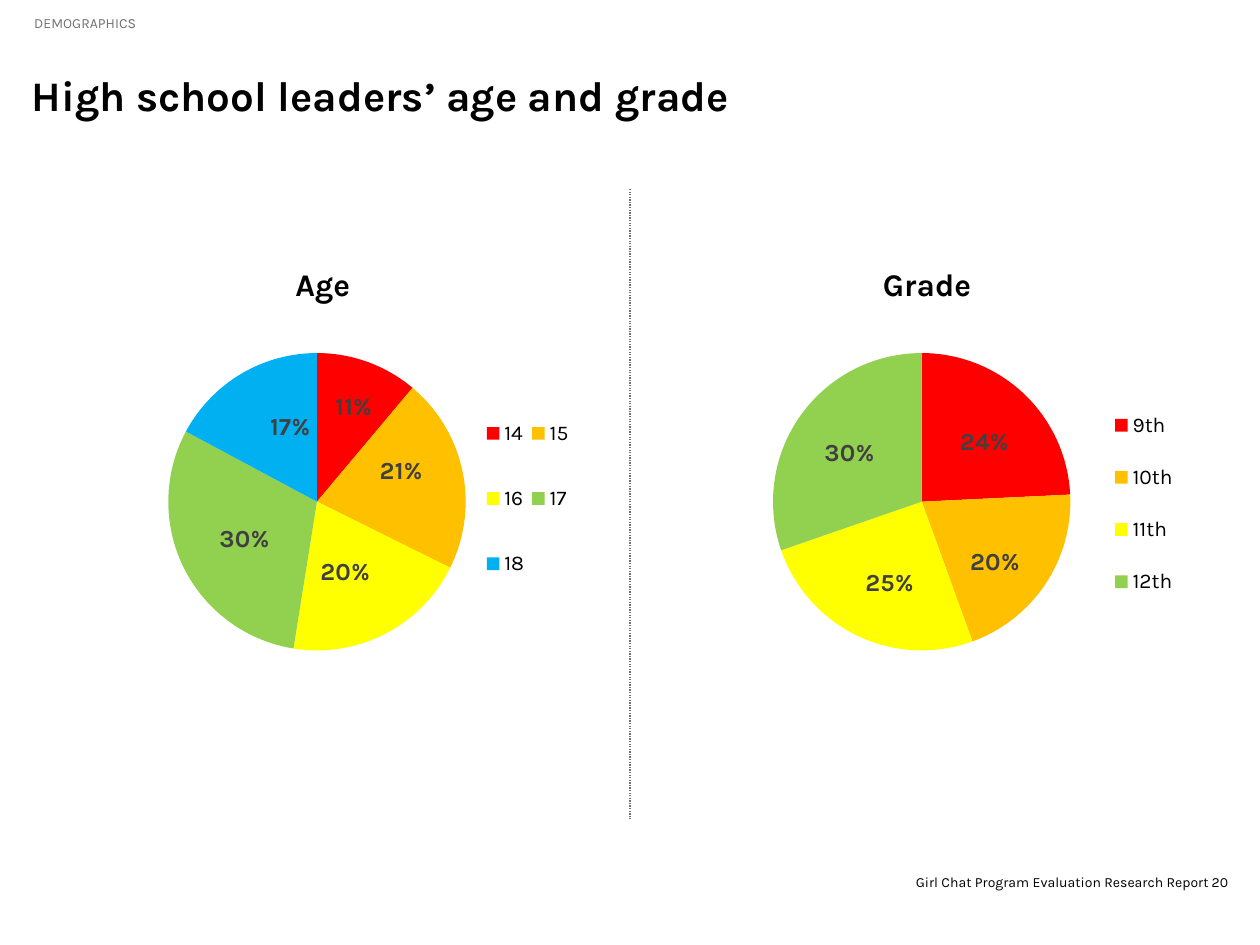
import pptx
import pptx.chart.data
import pptx.dml.color
import pptx.enum.chart
import pptx.enum.dml
import pptx.enum.shapes
import pptx.enum.text
import pptx.oxml
import pptx.oxml.ns
import pptx.util
from dataclasses import dataclass

Cm = pptx.util.Cm
Pt = pptx.util.Pt
RGB = pptx.dml.color.RGBColor.from_string
qn = pptx.oxml.ns.qn
PP_ALIGN = pptx.enum.text.PP_ALIGN
MSO_ANCHOR = pptx.enum.text.MSO_ANCHOR


@dataclass(frozen=True)
class Theme:
    font: str = "Karla"
    black: str = "000000"
    gray: str = "717073"
    label: str = "404040"
    slices: tuple = ("FF0000", "FFC000", "FFFF00", "92D050", "00B0F0")
    title_pt: int = 24
    chart_title_pt: int = 18
    label_pt: int = 14
    legend_pt: int = 12
    small_pt: int = 8


theme = Theme()


def set_font(font, size, color, bold=False):
    font.name = theme.font
    font.size = Pt(size)
    font.bold = bold
    font.color.rgb = RGB(color)


def set_layout(parent, index, modes, **sizes):
    """Place a chart part by fractions of the chart area."""
    for old in parent.findall(qn("c:layout")):
        parent.remove(old)
    layout = pptx.oxml.parse_xml(
        f'<c:layout {pptx.oxml.ns.nsdecls("c")}><c:manualLayout/></c:layout>')
    entries = [(tag, "edge" if tag != "layoutTarget" else "inner") for tag in modes]
    for tag, value in entries + list(sizes.items()):
        child = pptx.oxml.parse_xml(
            f'<c:{tag} {pptx.oxml.ns.nsdecls("c")} val="{value}"/>')
        layout[0].append(child)
    parent.insert(index, layout)


prs = pptx.Presentation()
prs.slide_width, prs.slide_height = Cm(25.4), Cm(19.05)
s = prs.slides.add_slide(prs.slide_layouts.get_by_name("Title Only"))

# Title
sp = s.shapes.title
sp.left, sp.top, sp.width, sp.height = Cm(0.64), Cm(0.64), Cm(24.13), Cm(2.54)
tf = sp.text_frame
tf.text = "High school leaders’ age and grade"
tf.margin_left = tf.margin_right = tf.margin_top = tf.margin_bottom = 0
tf.auto_size = pptx.enum.text.MSO_AUTO_SIZE.NONE
tf.vertical_anchor = MSO_ANCHOR.MIDDLE
p = tf.paragraphs[0]
p.alignment = PP_ALIGN.LEFT
set_font(p.font, theme.title_pt, theme.black, bold=True)

# Section name, footer and page number
small_texts = [
    ("DEMOGRAPHICS", 0.69, 0.28, 12.01, 0.36, MSO_ANCHOR.BOTTOM, PP_ALIGN.LEFT, theme.gray),
    ("Girl Chat Program Evaluation Research Report", 16.33, 17.15, 8.05, 1.27,
     MSO_ANCHOR.MIDDLE, PP_ALIGN.RIGHT, theme.black),
    ("20", 24.1, 17.15, 0.66, 1.27, MSO_ANCHOR.MIDDLE, PP_ALIGN.RIGHT, theme.black),
]
for text, left, top, width, height, anchor, align, color in small_texts:
    tf = s.shapes.add_textbox(Cm(left), Cm(top), Cm(width), Cm(height)).text_frame
    tf.text = text
    tf.word_wrap = True
    tf.margin_left = tf.margin_right = tf.margin_top = tf.margin_bottom = 0
    tf.vertical_anchor = anchor
    p = tf.paragraphs[0]
    p.alignment = align
    set_font(p.font, theme.small_pt, color)

# Dotted divider
line = s.shapes.add_connector(
    pptx.enum.shapes.MSO_CONNECTOR.STRAIGHT, Cm(12.7), Cm(3.81), Cm(12.7), Cm(16.51))
line.line.color.rgb = RGB(theme.gray)
line.line.width = Pt(0.75)
line.line.dash_style = pptx.enum.dml.MSO_LINE.ROUND_DOT
line._element.spPr.append(
    pptx.oxml.parse_xml(f'<a:effectLst {pptx.oxml.ns.nsdecls("a")}/>'))

# Pie charts: name, left, title x, legend box, then category, value, label shift
pies = [
    ("Age", 0.64, 0.45, dict(x=0.78, y=0.3, w=0.17, h=0.48),
     [("14", 0.11, 0.02, -0.05), ("15", 0.21, 0.02, -0.03), ("16", 0.2, -0.01, 0.01),
      ("17", 0.3, -0.01, 0.01), ("18", 0.17, 0.02, -0.02)]),
    ("Grade", 12.83, 0.42, dict(x=0.82, y=0.31, w=0.13, h=0.48),
     [("9th", 0.24, 0.02, -0.01), ("10th", 0.2, 0.02, 0.04),
      ("11th", 0.25, 0, 0.03), ("12th", 0.3, -0.02, -0.01)]),
]
for name, left, title_x, legend_box, rows in pies:
    data = pptx.chart.data.CategoryChartData(number_format="0%")
    data.categories = [row[0] for row in rows]
    data.add_series("Series 1", [row[1] for row in rows])
    chart = s.shapes.add_chart(
        pptx.enum.chart.XL_CHART_TYPE.PIE,
        Cm(left), Cm(4.7), Cm(11.56), Cm(9.91), data).chart
    set_font(chart.font, theme.chart_title_pt, theme.black)
    plot = chart.plots[0]
    plot.vary_by_categories = True
    set_layout(plot._element.getparent(), 0, ["layoutTarget", "xMode", "yMode"],
               x=0.165, y=0.244, w=0.665, h=0.605)

    # Chart title
    chart.has_title = True
    tf = chart.chart_title.text_frame
    tf.text = name
    set_font(tf.paragraphs[0].font, theme.chart_title_pt, theme.black, bold=True)
    set_layout(chart.chart_title._element, 1, ["xMode", "yMode"], x=title_x, y=0.05)

    # Legend
    chart.has_legend = True
    chart.legend.position = pptx.enum.chart.XL_LEGEND_POSITION.RIGHT
    chart.legend.include_in_layout = False
    set_font(chart.legend.font, theme.legend_pt, theme.black)
    set_layout(chart.legend._element, 1, ["xMode", "yMode"], **legend_box)

    # Slices and their labels
    series = plot.series[0]
    for i, (category, value, dx, dy) in enumerate(rows):
        point = series.points[i]
        point.format.fill.solid()
        point.format.fill.fore_color.rgb = RGB(theme.slices[i])
        label = point.data_label
        set_font(label.font, theme.label_pt, theme.label, bold=True)
        label.position = pptx.enum.chart.XL_LABEL_POSITION.CENTER
        dLbl = series._element.findall(".//" + qn("c:dLbl"))[i]
        set_layout(dLbl, 1, [], x=dx, y=dy)

prs.save("out.pptx")
